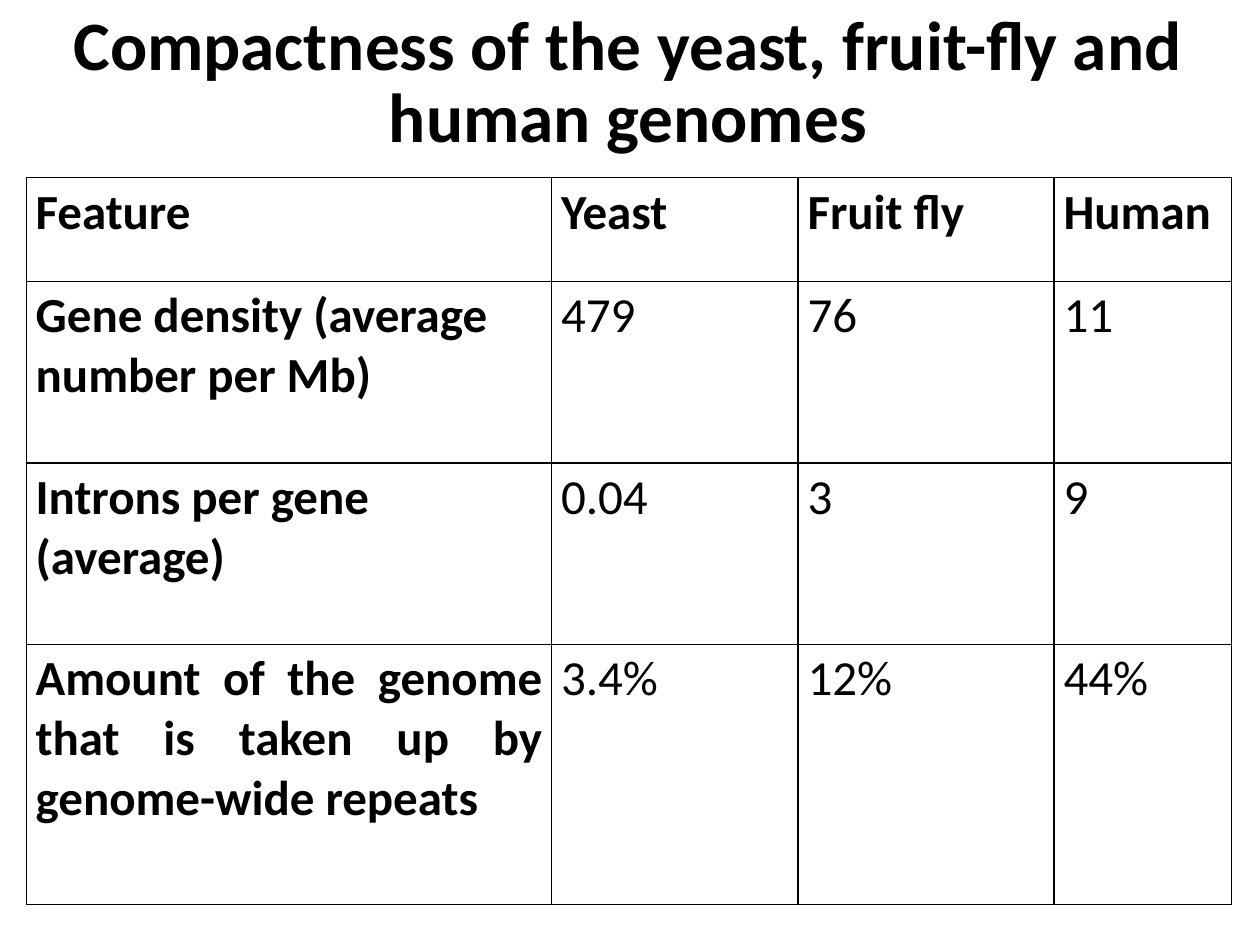
from pptx import Presentation
from pptx.util import Cm, Pt
from pptx.dml.color import RGBColor
from pptx.enum.text import PP_ALIGN, MSO_ANCHOR, MSO_AUTO_SIZE
from pptx.oxml.ns import qn
from lxml.etree import SubElement

HUES = {"ink": "000000", "page": "FFFFFF"}
FACE = "Calibri"


def style(para, size, bold):
    for run in para.runs:
        font = run.font
        font.name = FACE
        font.size = Pt(size)
        font.bold = bold
        font.color.rgb = RGBColor.from_string(HUES["ink"])


def border(cell):
    props = cell._tc.get_or_add_tcPr()
    for at, side in enumerate(("lnL", "lnR", "lnT", "lnB")):
        line = SubElement(props, qn(f"a:{side}"), w=str(Pt(1)))
        fill = SubElement(line, qn("a:solidFill"))
        SubElement(fill, qn("a:srgbClr"), val=HUES["ink"])
        props.remove(line)
        props.insert(at, line)


deck = Presentation()
deck.slide_width = Cm(25.4)
deck.slide_height = Cm(19.05)
slide = deck.slides.add_slide(deck.slide_layouts[5])
slide.background.fill.solid()
slide.background.fill.fore_color.rgb = RGBColor.from_string(HUES["page"])

title = slide.shapes.title
title.left, title.top = Cm(0.25), Cm(0)
title.width, title.height = Cm(24.82), Cm(3.43)
frame = title.text_frame
frame.text = "Compactness of the yeast, fruit-fly and human genomes"
frame.word_wrap = True
frame.auto_size = MSO_AUTO_SIZE.NONE
frame.vertical_anchor = MSO_ANCHOR.MIDDLE
head = frame.paragraphs[0]
head.alignment = PP_ALIGN.CENTER
head.line_spacing = 0.86
style(head, 39.6, True)

rows = [
    ("Feature", "Yeast", "Fruit fly", "Human"),
    ("Gene density (average number per Mb)", "479", "76", "11"),
    ("Introns per gene (average)", "0.04", "3", "9"),
    ("Amount of the genome that is taken up by genome-wide repeats",
     "3.4%", "12%", "44%"),
]
widths = [10.59, 4.97, 5.16, 3.58]
heights = [2.09, 3.66, 3.66, 5.24]

table = slide.shapes.add_table(
    len(rows), len(widths), Cm(0.53), Cm(3.58),
    Cm(sum(widths)), Cm(sum(heights))).table
table.horz_banding = False
for col, width in zip(table.columns, widths):
    col.width = Cm(width)
for row, height in zip(table.rows, heights):
    row.height = Cm(height)

for r, row in enumerate(rows):
    for c, text in enumerate(row):
        cell = table.cell(r, c)
        cell.text_frame.text = text
        cell.margin_left = cell.margin_right = Cm(0.19)
        cell.margin_top = cell.margin_bottom = Cm(0.1)
        cell.vertical_anchor = MSO_ANCHOR.TOP
        cell.fill.background()
        border(cell)
        style(cell.text_frame.paragraphs[0], 28, r == 0 or c == 0)

last = table.cell(len(rows) - 1, 0).text_frame.paragraphs[0]
last.alignment = PP_ALIGN.JUSTIFY

deck.save("out.pptx")
